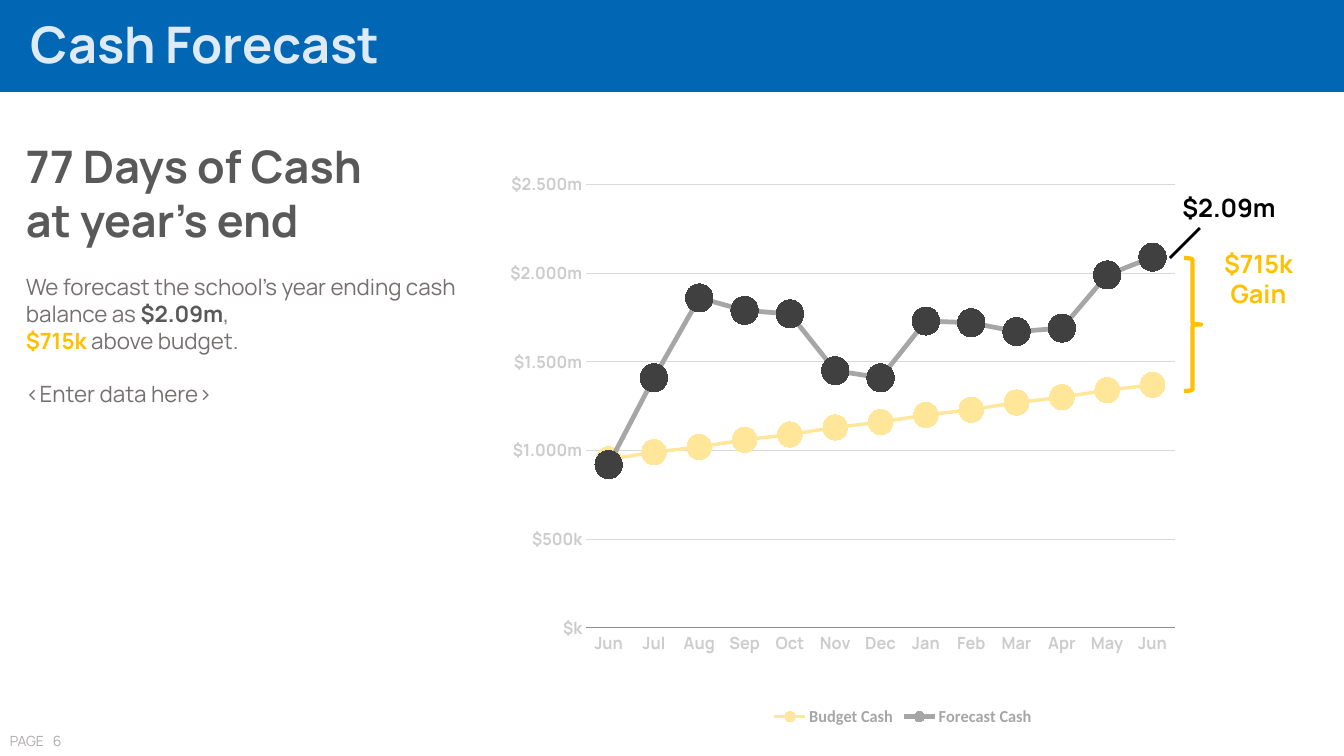
import pptx
import pptx.chart.data
import pptx.dml.color
import pptx.enum.chart
import pptx.enum.shapes
import pptx.enum.text
import pptx.oxml
import pptx.oxml.ns
import pptx.util
from lxml import etree

PX = 914400 / 100.8
FONT = "Manrope"
COLORS = {
    "header": "0166B3", "title": "DEEBF7", "page": "AFABAB",
    "heading": "595959", "body": "767171", "gain": "FFC000",
    "axis_text": "CCCCCC", "grid": "D9D9D9", "axis": "8C8C8C",
    "forecast": "A6A6A6", "forecast_dot": "404040", "budget": "FFE699",
    "black": "000000",
}
MONTHS = "Jun Jul Aug Sep Oct Nov Dec Jan Feb Mar Apr May Jun".split()
# Name, thousands of dollars, line colour, marker colour, line width, marker size
SERIES = [
    ("Budget Cash", [950, 990, 1020, 1060, 1090, 1130, 1160, 1200, 1230,
                     1270, 1300, 1340, 1370], "budget", "budget", 2.5, 18),
    ("Forecast Cash", [920, 1410, 1860, 1790, 1770, 1450, 1410, 1730, 1720,
                       1670, 1690, 1990, 2090],
     "forecast", "forecast_dot", 3.5, 20),
]
PLOT_LAYOUT = {"layoutTarget": "inner", "xMode": "edge", "yMode": "edge",
               "x": 0.086, "y": 0.047, "w": 0.859, "h": 0.758}
LEGEND_LAYOUT = {"xMode": "edge", "yMode": "edge", "x": 0.353, "y": 0.933}


def qn(tag):
    return pptx.oxml.ns.qn(tag)


def emu(px):
    return pptx.util.Emu(round(px * PX))


def rgb(name):
    return pptx.dml.color.RGBColor.from_string(COLORS[name])


class Deck:
    def __init__(self, width, height):
        self.prs = pptx.Presentation()
        self.prs.slide_width, self.prs.slide_height = emu(width), emu(height)
        self.s = self.prs.slides.add_slide(self.prs.slide_layouts[6])

    def font(self, font, size, color, bold=False, name=FONT):
        font.size, font.bold, font.name = pptx.util.Pt(size), bold, name
        font.color.rgb = rgb(color)

    def stroke(self, line, color, width):
        line.color.rgb, line.width = rgb(color), pptx.util.Pt(width)

    def shape(self, kind, box, fill=None, line=None, width=1):
        sp = self.s.shapes.add_shape(kind, *map(emu, box))
        sp.shadow.inherit = False
        if fill:
            sp.fill.solid()
            sp.fill.fore_color.rgb = rgb(fill)
        else:
            sp.fill.background()
        if line:
            self.stroke(sp.line, line, width)
        else:
            sp.line.fill.background()

    def text(self, box, paragraphs, center=False, wrap=True):
        """Each paragraph: (runs, size, color, bold, space before);
        a run is a string or (string, color) for bold emphasis."""
        tf = self.s.shapes.add_textbox(*map(emu, box)).text_frame
        tf.word_wrap = wrap
        for i, (runs, size, color, bold, before) in enumerate(paragraphs):
            p = tf.add_paragraph() if i else tf.paragraphs[0]
            self.font(p.font, size, color, bold)
            if before:
                p.space_before = pptx.util.Pt(before)
            if center:
                p.alignment = pptx.enum.text.PP_ALIGN.CENTER
            for run in runs:
                r = p.add_run()
                if isinstance(run, str):
                    r.text = run
                else:
                    r.text = run[0]
                    r.font.bold, r.font.color.rgb = True, rgb(run[1])

    def line(self, start, end, color, width):
        cx = self.s.shapes.add_connector(
            pptx.enum.shapes.MSO_CONNECTOR.STRAIGHT, *map(emu, start + end))
        self.stroke(cx.line, color, width)
        etree.SubElement(cx._element.spPr, qn("a:effectLst"))

    def marker(self, marker, color, size):
        marker.style = pptx.enum.chart.XL_MARKER_STYLE.CIRCLE
        marker.size = size
        marker.format.fill.solid()
        marker.format.fill.fore_color.rgb = rgb(color)
        marker.format.line.color.rgb = rgb(color)

    def layout(self, parent, index, settings):
        layout = parent.find(qn("c:layout"))
        if layout is None:
            layout = etree.Element(qn("c:layout"))
            parent.insert(index, layout)
        manual = etree.SubElement(layout, qn("c:manualLayout"))
        for tag, value in settings.items():
            etree.SubElement(manual, qn("c:" + tag)).set("val", str(value))

    def line_chart(self, box, categories, series):
        data = pptx.chart.data.CategoryChartData()
        data.categories = categories
        for name, thousands, *_ in series:
            data.add_series(name, [v * 1000 for v in thousands])
        chart = self.s.shapes.add_chart(
            pptx.enum.chart.XL_CHART_TYPE.LINE_MARKERS,
            *map(emu, box), data).chart
        chart.has_title = False
        self.font(chart.font, 10, "black", name="Calibri")
        plot = chart.plots[0]
        plot.vary_by_categories = False

        # Series, with the dots coloured point by point where they differ
        all_series = list(plot.series)
        for ser, (_, values, color, dot, width, size) in zip(all_series, series):
            ser.smooth = False
            self.stroke(ser.format.line, color, width)
            self.marker(ser.marker, color, size)
            if dot != color:
                for i in range(len(values)):
                    point = ser.points[i]
                    self.marker(point.marker, dot, size)
                    self.stroke(point.format.line, dot, width)
        # Forecast ranks ahead of budget
        for rank, ser in enumerate(reversed(all_series)):
            ser._element.find(qn("c:order")).set("val", str(rank))

        # Axes
        for axis in (chart.category_axis, chart.value_axis):
            axis.major_tick_mark = pptx.enum.chart.XL_TICK_MARK.NONE
            axis.minor_tick_mark = pptx.enum.chart.XL_TICK_MARK.NONE
            self.font(axis.tick_labels.font, 12, "axis_text", True)
        self.stroke(chart.category_axis.format.line, "axis", 0.75)
        va = chart.value_axis
        va.minimum_scale, va.maximum_scale, va.major_unit = 0, 2500000, 500000
        va.format.line.fill.background()
        self.stroke(va.major_gridlines.format.line, "grid", 0.75)
        va.tick_labels.number_format = r'[>999999]\ "$"#.##0,,"m";"$"#,"k"'
        va.tick_labels.number_format_is_linked = False

        # Legend
        chart.has_legend = True
        chart.legend.position = pptx.enum.chart.XL_LEGEND_POSITION.BOTTOM
        chart.legend.include_in_layout = False
        self.font(chart.legend.font, 12, "forecast", True, "Calibri")

        # Fixed places for plot area and legend
        self.layout(chart._chartSpace.find(".//" + qn("c:plotArea")), 0,
                    PLOT_LAYOUT)
        self.layout(chart.legend._element, 1, LEGEND_LAYOUT)


def main():
    deck = Deck(1344, 756)
    shapes = pptx.enum.shapes.MSO_SHAPE

    # Header and page number
    deck.shape(shapes.RECTANGLE, (0, 0, 1344, 92), fill="header")
    deck.text((0, 728, 57, 27), [(["PAGE"], 10, "page", False, 0)], wrap=False)
    deck.text((43, 728, 43, 27), [(["6"], 10, "page", False, 0)])
    deck.text((21, 8, 1323, 72), [(["Cash Forecast"], 36, "title", True, 0)])

    # Cash chart
    deck.line_chart((507, 157, 706, 585), MONTHS, SERIES)

    # Gain bracket and label
    deck.shape(shapes.RIGHT_BRACE, (1184, 258, 17, 133), line="gain", width=3)
    deck.text((1206, 243, 105, 72), [(["$715k Gain"], 18, "gain", True, 0)],
              center=True)

    # Summary
    deck.text((16, 134, 451, 281), [
        (["77 Days of Cash"], 32, "heading", True, 0),
        (["at year’s end"], 32, "heading", True, 0),
        (["We forecast the school’s year ending cash balance as ",
          ("$2.09m", "heading"), ","], 16, "body", False, 19),
        ([("$715k", "gain"), " above budget."], 16, "body", False, 0),
        (["<Enter data here>"], 16, "body", False, 19),
    ])

    # Year-end callout
    deck.text((1159, 187, 140, 40), [(["$2.09m"], 18, "black", True, 0)],
              center=True)
    deck.line((1170, 258), (1200, 228), "black", 2)

    deck.prs.save("out.pptx")


if __name__ == "__main__":
    main()
